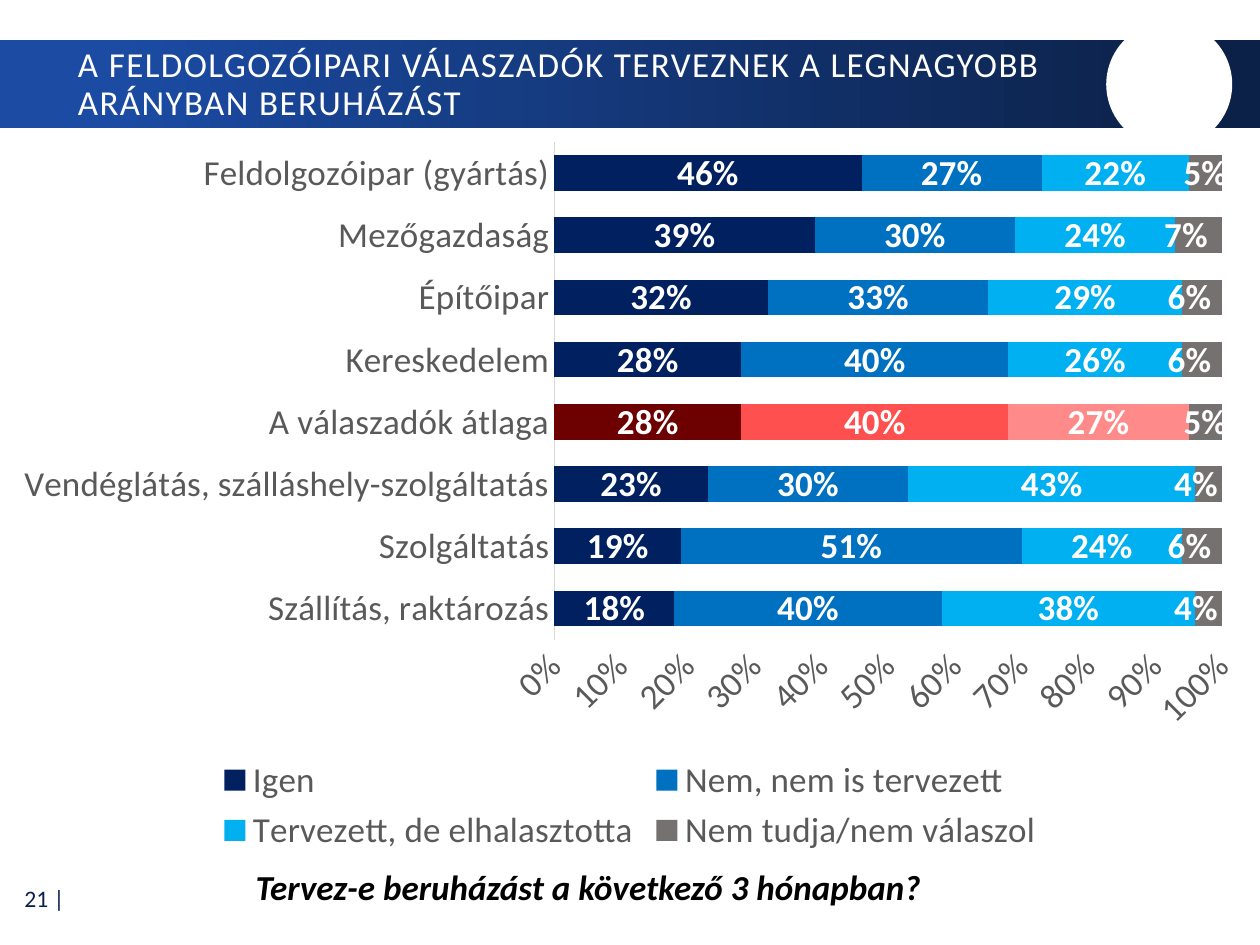
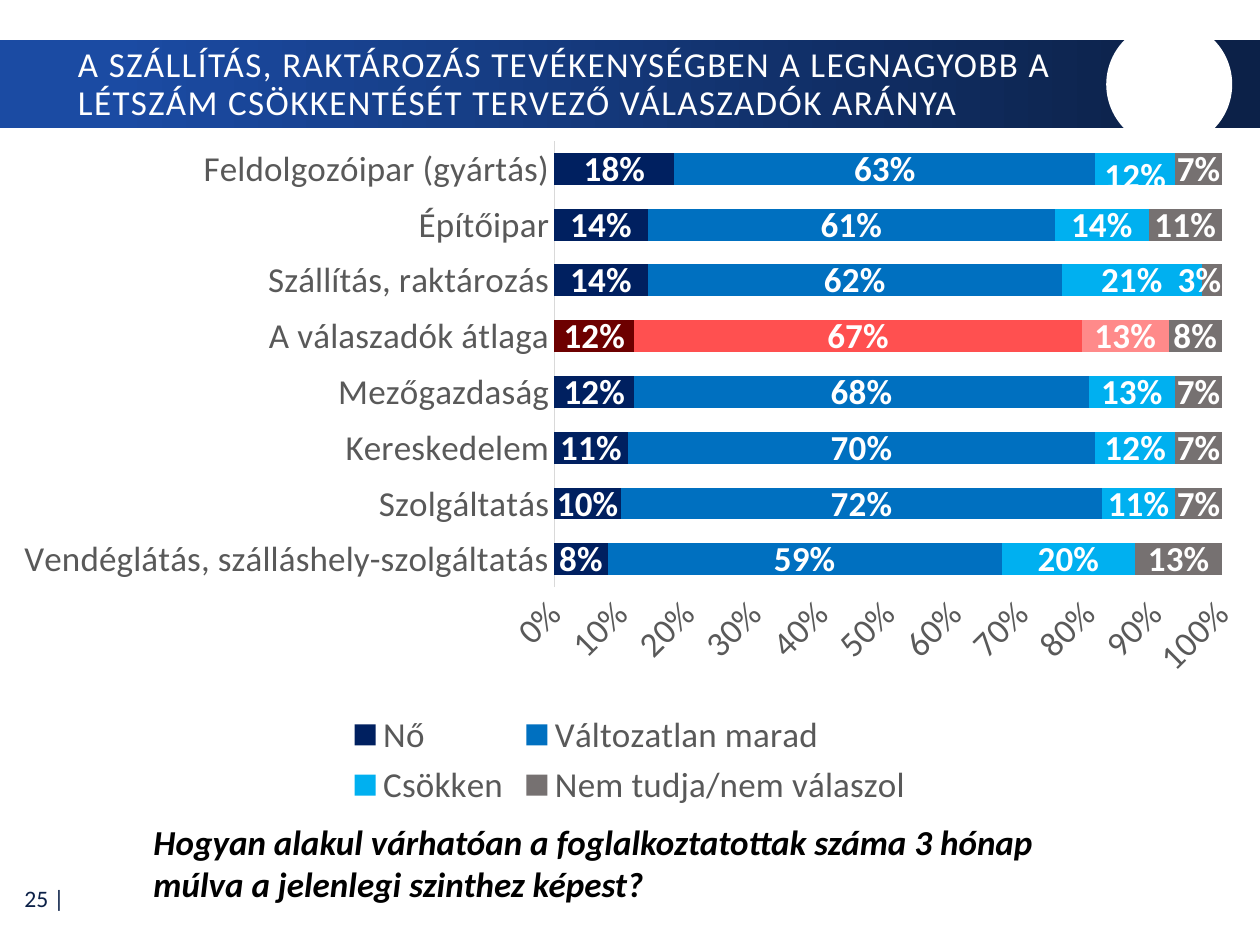
from dataclasses import dataclass, field

from lxml.etree import SubElement
from pptx import Presentation
from pptx.chart.data import CategoryChartData
from pptx.dml.color import RGBColor
from pptx.enum.chart import (XL_CHART_TYPE, XL_LABEL_POSITION, XL_LEGEND_POSITION,
                             XL_TICK_LABEL_POSITION, XL_TICK_MARK)
from pptx.enum.shapes import MSO_SHAPE
from pptx.enum.text import MSO_ANCHOR, PP_ALIGN
from pptx.oxml.ns import qn
from pptx.oxml.xmlchemy import OxmlElement
from pptx.util import Emu, Pt

SCALE = 9144  # EMU in one px, 100 px to the inch


@dataclass(frozen=True)
class Theme:
    font: str = "Calibri"
    body: float = 20
    small: float = 13.5
    tiny: float = 10
    white: str = "FFFFFF"
    black: str = "000000"
    gray: str = "595959"
    rule: str = "D9D9D9"
    navy: str = "0C2148"
    blue: str = "1B4BA3"
    bars: tuple = ("002060", "0070C0", "00B0F0", "767171")
    marked: tuple = ("6D0000", "FF5050", "FF8A8A", "767171")


@dataclass(frozen=True)
class Box:
    left: int
    top: int
    width: int
    height: int

    def emu(self) -> tuple:
        return tuple(Emu(n * SCALE) for n in (self.left, self.top, self.width, self.height))


@dataclass(frozen=True)
class Page:
    number: int
    title: str
    ask: str
    ask_box: Box
    chart_box: Box
    plot: tuple  # x, y, width, height as shares of the chart
    names: tuple
    rows: dict  # sector: one percent per answer, from the bottom up
    nudge: dict = field(default_factory=dict)  # (answer, row): label shift


THEME = Theme()
MEAN = "A válaszadók átlaga"
PAGES = (
    Page(
        21, "A FELDOLGOZÓIPARI VÁLASZADÓK TERVEZNEK A LEGNAGYOBB ARÁNYBAN BERUHÁZÁST",
        "Tervez-e beruházást a következő 3 hónapban?",
        Box(193, 682, 550, 44), Box(0, 101, 1000, 581), (0.44, 0.02, 0.53, 0.68),
        ("Igen", "Nem, nem is tervezett", "Tervezett, de elhalasztotta",
         "Nem tudja/nem válaszol"),
        {
            "Szállítás, raktározás": (18, 40, 38, 4),
            "Szolgáltatás": (19, 51, 24, 6),
            "Vendéglátás, szálláshely-szolgáltatás": (23, 30, 43, 4),
            MEAN: (28, 40, 27, 5),
            "Kereskedelem": (28, 40, 26, 6),
            "Építőipar": (32, 33, 29, 6),
            "Mezőgazdaság": (39, 30, 24, 7),
            "Feldolgozóipar (gyártás)": (46, 27, 22, 5),
        },
        {(3, row): (-0.01, 0) for row in (0, 1, 2, 4, 5, 6)},
    ),
    Page(
        25, "A SZÁLLÍTÁS, RAKTÁROZÁS TEVÉKENYSÉGBEN A LEGNAGYOBB A LÉTSZÁM "
        "CSÖKKENTÉSÉT TERVEZŐ VÁLASZADÓK ARÁNYA",
        "Hogyan alakul várhatóan a foglalkoztatottak száma 3 hónap múlva "
        "a jelenlegi szinthez képest?",
        Box(112, 646, 724, 77), Box(0, 101, 1000, 545), (0.44, 0.02, 0.53, 0.65),
        ("Nő", "Változatlan marad", "Csökken", "Nem tudja/nem válaszol"),
        {
            "Vendéglátás, szálláshely-szolgáltatás": (8, 59, 20, 13),
            "Szolgáltatás": (10, 72, 11, 7),
            "Kereskedelem": (11, 70, 12, 7),
            "Mezőgazdaság": (12, 68, 13, 7),
            MEAN: (12, 67, 13, 8),
            "Szállítás, raktározás": (14, 62, 21, 3),
            "Építőipar": (14, 61, 14, 11),
            "Feldolgozóipar (gyártás)": (18, 63, 12, 7),
        },
        {(2, 7): (0, 0.01), (3, 5): (-0.01, 0)},
    ),
)


def style(font, size: float, color: str, bold: bool = False, slant: bool = False) -> None:
    font.name, font.size = THEME.font, Pt(size)
    font.bold, font.italic = bold, slant
    font.color.rgb = RGBColor.from_string(color)


def paint(fill, color: str) -> None:
    fill.solid()
    fill.fore_color.rgb = RGBColor.from_string(color)


def write(slide, box: Box, text: str, *, size: float = THEME.body, color: str = THEME.black,
          bold: bool = False, slant: bool = False, align=PP_ALIGN.LEFT,
          anchor=MSO_ANCHOR.TOP, lead: float = 1.0, track: int = 0) -> None:
    body = slide.shapes.add_textbox(*box.emu()).text_frame
    body.word_wrap, body.vertical_anchor = True, anchor
    para = body.paragraphs[0]
    para.alignment, para.line_spacing = align, lead
    run = para.add_run()
    run.text = text
    style(run.font, size, color, bold, slant)
    if track:
        run._r.get_or_add_rPr().set("spc", str(track))


def shape(slide, kind, box: Box):
    item = slide.shapes.add_shape(kind, *box.emu())
    item.shadow.inherit = False
    item.line.fill.background()
    return item


def frame(slide, page: Page) -> None:
    """Page number, title band and white disc."""
    write(slide, Box(1, 694, 60, 37), f"{page.number} |", size=THEME.small,
          color=THEME.navy, align=PP_ALIGN.RIGHT, anchor=MSO_ANCHOR.MIDDLE)
    band = shape(slide, MSO_SHAPE.RECTANGLE, Box(0, 32, 1000, 70))
    band.fill.gradient()
    band.fill.gradient_angle = 0
    stops = ((0.09, THEME.blue), (0.95, THEME.navy))
    for stop, (spot, color) in zip(band.fill.gradient_stops, stops):
        stop.position = spot
        stop.color.rgb = RGBColor.from_string(color)
    paint(shape(slide, MSO_SHAPE.OVAL, Box(878, 17, 100, 100)).fill, THEME.white)
    write(slide, Box(52, 34, 832, 67), page.title, color=THEME.white,
          anchor=MSO_ANCHOR.MIDDLE, lead=0.9, track=80)


def layout(parts: dict):
    """Manual chart layout, from tag names and values."""
    root = OxmlElement("c:layout")
    inner = SubElement(root, qn("c:manualLayout"))
    for tag, value in parts.items():
        SubElement(inner, qn(f"c:{tag}")).set("val", str(value))
    return root


def place(chart, page: Page) -> None:
    """Fix the plot within the chart."""
    area = chart._chartSpace.chart.plotArea
    for old in area.findall(qn("c:layout")):
        area.remove(old)
    x, y, w, h = page.plot
    area.insert(0, layout({"layoutTarget": "inner", "xMode": "edge", "yMode": "edge",
                           "x": x, "y": y, "w": w, "h": h}))


def axes(chart) -> None:
    for axis in (chart.category_axis, chart.value_axis):
        axis.has_major_gridlines = False
        axis.major_tick_mark = axis.minor_tick_mark = XL_TICK_MARK.NONE
        axis.tick_label_position = XL_TICK_LABEL_POSITION.NEXT_TO_AXIS
        style(axis.tick_labels.font, THEME.body, THEME.gray)
    line = chart.category_axis.format.line
    line.width = Pt(0.75)
    paint(line.fill, THEME.rule)
    scale = chart.value_axis
    scale.format.line.fill.background()
    scale.minimum_scale, scale.maximum_scale, scale.major_unit = 0, 1, 0.1
    scale.tick_labels.number_format = "0%"
    scale.tick_labels.number_format_is_linked = False
    # Slanted percent labels
    scale._element.find(f"{qn('c:txPr')}/{qn('a:bodyPr')}").set("rot", "-2700000")


def color(chart, page: Page) -> None:
    """Bar fills and their labels."""
    mean = list(page.rows).index(MEAN)
    for num, row in enumerate(chart.plots[0].series):
        row.invert_if_negative = False
        paint(row.format.fill, THEME.bars[num])
        paint(row.points[mean].format.fill, THEME.marked[num])
        marks = row.data_labels
        marks.show_value = True
        marks.number_format, marks.number_format_is_linked = "0%", False
        marks.position = XL_LABEL_POSITION.CENTER
        style(marks.font, THEME.body, THEME.white, bold=True)
    for (num, spot), (x, y) in page.nudge.items():
        row = chart.plots[0].series[num]
        mark = row.points[spot].data_label
        style(mark.font, THEME.body, THEME.white, bold=True)
        mark.position = XL_LABEL_POSITION.CENTER
        index = row._element.xpath(f'c:dLbls/c:dLbl/c:idx[@val="{spot}"]')[0]
        index.addnext(layout({"x": x, "y": y}))


def graph(slide, page: Page) -> None:
    data = CategoryChartData(number_format="0%")
    data.categories = list(page.rows)
    for name, values in zip(page.names, zip(*page.rows.values())):
        data.add_series(name, [value / 100 for value in values])
    chart = slide.shapes.add_chart(XL_CHART_TYPE.BAR_STACKED, *page.chart_box.emu(), data).chart
    style(chart.font, THEME.tiny, THEME.black)
    chart.has_title = False
    chart.has_legend = True
    chart.legend.position = XL_LEGEND_POSITION.BOTTOM
    chart.legend.include_in_layout = False
    style(chart.legend.font, THEME.body, THEME.gray)
    plot = chart.plots[0]
    plot.gap_width, plot.overlap, plot.vary_by_categories = 75, 100, False
    axes(chart)
    color(chart, page)
    place(chart, page)


def main() -> None:
    deck = Presentation()
    deck.slide_width, deck.slide_height = Emu(1000 * SCALE), Emu(750 * SCALE)
    for page in PAGES:
        slide = deck.slides.add_slide(deck.slide_layouts[6])
        frame(slide, page)
        graph(slide, page)
        write(slide, page.ask_box, page.ask, bold=True, slant=True)
    deck.save("out.pptx")


if __name__ == "__main__":
    main()
